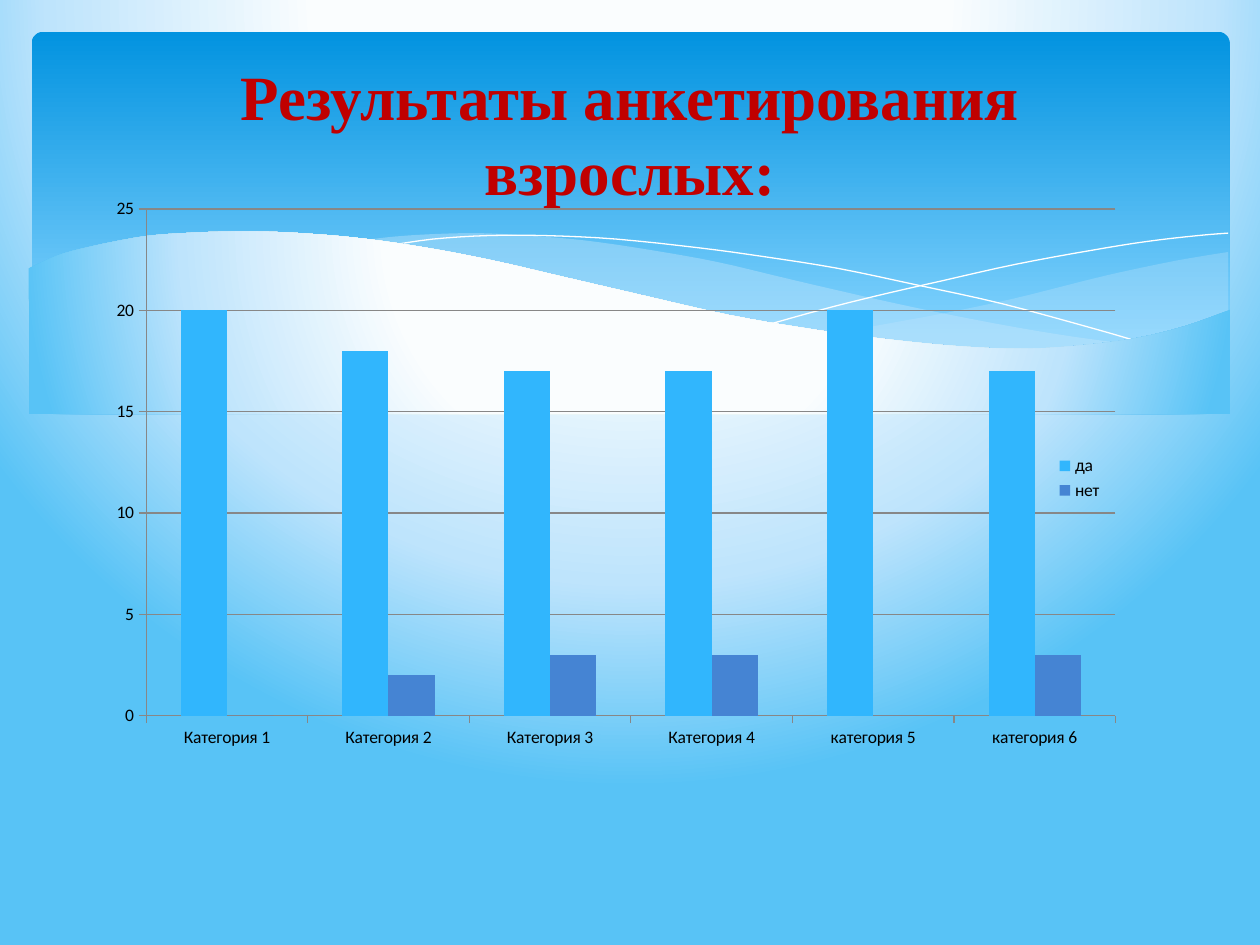
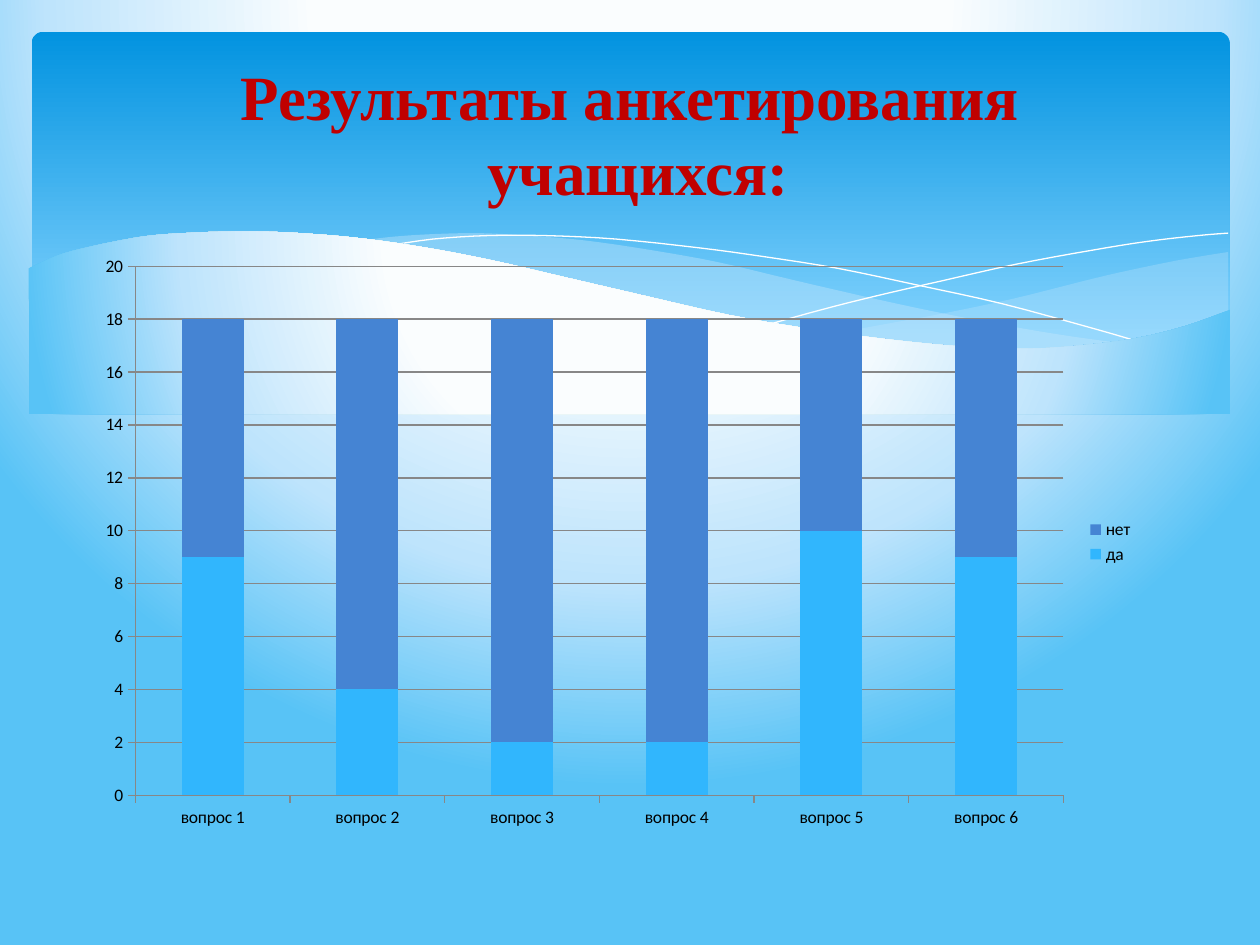
from collections import namedtuple
from dataclasses import dataclass

from lxml import etree
from pptx import Presentation
from pptx.chart.data import CategoryChartData
from pptx.dml.color import RGBColor as Rgb
from pptx.enum.chart import XL_CHART_TYPE as ChartType
from pptx.enum.chart import XL_LEGEND_POSITION as LegendSide
from pptx.enum.chart import XL_TICK_MARK as Tick
from pptx.enum.shapes import MSO_SHAPE as Preset
from pptx.enum.text import MSO_ANCHOR as Anchor
from pptx.enum.text import PP_ALIGN as Align
from pptx.oxml.ns import qn
from pptx.util import Cm, Pt

Box = namedtuple("Box", "left top width height")


@dataclass(frozen=True)
class Theme:
    title_color: str = "C00000"
    text_color: str = "000000"
    axis_color: str = "878787"
    haze_color: str = "C6E7FC"
    line_color: str = "FFFFFF"
    yes_color: str = "31B6FD"
    no_color: str = "4584D3"
    glow: tuple = ((40, "FAFDFE"), (74, "BEE4FC"), (100, "58C3F6"))
    band: tuple = ((0, "0293E0"), (90, "83D3FE"))
    title_font: str = "Times New Roman"
    chart_font: str = "Calibri"
    title_size: int = 36
    chart_size: int = 10
    axis_width: float = 0.75


THEME = Theme()

# Boxes in centimetres
BAND = Box(0.64, 0.64, 24.15, 6.86)
WAVES = Box(0.58, 4.67, 24.23, 3.68)
TITLE = Box(1.27, 0.94, 22.86, 3.48)

# Wave edges: knots in centimetres from the corner of the wave box
HAZES = (
    (29, (
        ((24.18, 0.41), (23.16, 0.58), (22.05, 0.81), (21.29, 0.99),
         (19.86, 1.35), (18.54, 1.63), (17.35, 1.85), (16.21, 2.06)),
        ((16.21, 2.06), (17.32, 2.21), (18.34, 2.31), (19.25, 2.36),
         (20.35, 2.36), (21.34, 2.31), (22.2, 2.18), (23.16, 1.98),
         (24.18, 1.6)),
    )),
    (40, (
        ((22.1, 2.26), (20.68, 2.06), (19.1, 1.78), (17.35, 1.42),
         (15.39, 0.97), (13.87, 0.61), (12.47, 0.36), (11.23, 0.18),
         (10.08, 0.08), (9.07, 0.03), (8.15, 0.05), (7.37, 0.1),
         (6.68, 0.18)),
        ((6.68, 0.18), (8.1, 0.38), (9.68, 0.69), (10.82, 0.97),
         (12.88, 1.42), (14.68, 1.8), (16.31, 2.08), (17.75, 2.29),
         (19.05, 2.36), (20.19, 2.39), (21.18, 2.36), (22.1, 2.26)),
    )),
)
HAIRLINES = (
    ((7.26, 0.28), (8.15, 0.15), (9.25, 0.08), (10.41, 0.08), (11.84, 0.15),
     (13.54, 0.33), (14.86, 0.51), (16.31, 0.74), (17.88, 1.07),
     (19.61, 1.45), (21.49, 1.96), (22.45, 2.24)),
    ((14.99, 1.85), (16, 1.57), (17.07, 1.3), (18.42, 0.99), (19.89, 0.66),
     (21.41, 0.38), (22.53, 0.2), (23.57, 0.08), (24.18, 0.03)),
)
CREST = (
    (24.23, 1.57), (23.29, 1.91), (22.25, 2.16), (21.01, 2.31), (19.96, 2.36),
    (18.75, 2.31), (17.4, 2.18), (15.88, 1.98), (14.12, 1.68), (12.19, 1.24),
    (10.77, 0.91), (9.35, 0.58), (8.05, 0.33), (6.83, 0.15), (5.77, 0.05),
    (4.78, 0), (3.91, 0), (3.12, 0.03), (2.44, 0.08), (1.83, 0.18),
    (1.12, 0.33), (0.58, 0.48), (0, 0.74),
)

SURVEYS = (
    dict(
        title="Результаты анкетирования\vвзрослых:",
        box=Box(1.7, 3.94, 20.8, 11.4),
        kind=ChartType.COLUMN_CLUSTERED,
        questions=[f"Категория {n}" for n in range(1, 5)]
        + [f"категория {n}" for n in (5, 6)],
        yes=(20, 18, 17, 17, 20, 17),
        no=(0, 2, 3, 3, 0, 3),
        scale=dict(minimum_scale=0, maximum_scale=25, major_unit=5),
        overlap=0,
        plot_area=dict(x=0.06, y=0.024, w=0.94, h=0.896),
    ),
    dict(
        title="Результаты анкетирования\v учащихся:",
        box=Box(1.7, 4.93, 21.41, 11.99),
        kind=ChartType.COLUMN_STACKED,
        questions=[f"вопрос {n}" for n in range(1, 7)],
        yes=(9, 4, 2, 2, 10, 9),
        no=(9, 14, 16, 16, 8, 9),
        scale=dict(minimum_scale=0, maximum_scale=20, major_unit=2),
        overlap=100,
        plot_area=None,
    ),
)


def set_format(target, values):
    for name, value in values.items():
        setattr(target, name, value)


def set_font(font, family, size, color, bold=False):
    set_format(font, dict(name=family, size=Pt(size), bold=bold))
    font.color.rgb = Rgb.from_string(color)


def in_cm(box):
    return [Cm(length) for length in box]


def add_child(parent, tag, **attributes):
    child = etree.SubElement(parent, qn(tag))
    for name, value in attributes.items():
        child.set(name, str(value))
    return child


def paint_gradient(owner, fill, stops, radial):
    fill.gradient()
    gradient = next(owner._element.iter(qn("a:gradFill")))
    gradient.clear()
    stop_list = add_child(gradient, "a:gsLst")
    for percent, color in stops:
        stop = add_child(stop_list, "a:gs", pos=percent * 1000)
        add_child(stop, "a:srgbClr", val=color)
    if radial:
        circle = add_child(gradient, "a:path", path="circle")
        add_child(circle, "a:fillToRect", l=20000, t=-40000, r=20000, b=140000)
    else:
        add_child(gradient, "a:lin", ang=5400000, scaled=0)


def smooth_edge(knots, steps=4):
    """Catmull-Rom curve through the knots."""
    padded = [knots[0], *knots, knots[-1]]
    curve = [knots[0]]
    for a, b, c, d in zip(padded, padded[1:], padded[2:], padded[3:]):
        for step in range(1, steps + 1):
            t = step / steps
            curve.append(tuple(
                q + 0.5 * t * (r - p + t * (2 * p - 5 * q + 4 * r - s
                                            + t * (3 * (q - r) + s - p)))
                for p, q, r, s in zip(a, b, c, d)))
    return curve


def add_outline(slide, box, edges, close=True):
    points = [(Cm(box.left + x), Cm(box.top + y))
              for edge in edges for x, y in smooth_edge(edge)]
    builder = slide.shapes.build_freeform(*points[0])
    builder.add_line_segments(points[1:], close=close)
    outline = builder.convert_to_shape()
    outline.shadow.inherit = False
    if close:
        outline.line.fill.background()
    return outline


def add_band(slide, box):
    band = slide.shapes.add_shape(Preset.ROUNDED_RECTANGLE, *in_cm(box))
    band.adjustments[0] = 0.034
    band.shadow.inherit = False
    band.line.fill.background()
    paint_gradient(band, band.fill, THEME.band, radial=False)


def add_waves(slide, box):
    # Translucent hazes
    for opacity, edges in HAZES:
        haze = add_outline(slide, box, edges)
        haze.fill.solid()
        haze.fill.fore_color.rgb = Rgb.from_string(THEME.haze_color)
        color = next(haze._element.iter(qn("a:srgbClr")))
        add_child(color, "a:alpha", val=opacity * 1000)

    # White hairlines
    for knots in HAIRLINES:
        hairline = add_outline(slide, box, [knots], close=False)
        hairline.fill.background()
        hairline.line.color.rgb = Rgb.from_string(THEME.line_color)
        hairline.line.width = Pt(0)

    # Light crest that cuts off the band
    floor = ((0, box.height), (box.width, box.height))
    crest = add_outline(slide, box, (CREST, floor))
    paint_gradient(crest, crest.fill, THEME.glow, radial=True)


def add_title(slide, box, wording):
    frame = slide.shapes.add_textbox(*in_cm(box)).text_frame
    set_format(frame, dict(word_wrap=True, vertical_anchor=Anchor.MIDDLE))
    heading = frame.paragraphs[0]
    heading.text = wording
    heading.alignment = Align.CENTER
    for run in heading.runs:
        set_font(run.font, THEME.title_font, THEME.title_size,
                 THEME.title_color, bold=True)


def set_plot_area(chart, fractions):
    area = next(chart._chartSpace.iter(qn("c:plotArea")))
    for old in area.findall(qn("c:layout")):
        area.remove(old)
    layout = etree.Element(qn("c:layout"))
    area.insert(0, layout)
    manual = add_child(layout, "c:manualLayout")
    add_child(manual, "c:layoutTarget", val="inner")
    for side in "xy":
        add_child(manual, f"c:{side}Mode", val="edge")
    for name, fraction in fractions.items():
        add_child(manual, f"c:{name}", val=fraction)


def add_answers_chart(slide, box, survey):
    answers = CategoryChartData()
    answers.categories = survey["questions"]
    answers.add_series("да", survey["yes"])
    answers.add_series("нет", survey["no"])
    chart = slide.shapes.add_chart(survey["kind"], *in_cm(box), answers).chart
    set_format(chart, dict(has_title=False, has_legend=True))
    set_font(chart.font, THEME.chart_font, THEME.chart_size, THEME.text_color)
    set_format(chart.legend, dict(
        position=LegendSide.RIGHT,
        include_in_layout=survey["plot_area"] is not None))

    # Columns
    plot = chart.plots[0]
    set_format(plot, dict(gap_width=150, overlap=survey["overlap"],
                          vary_by_categories=False))
    for series, color in zip(plot.series, (THEME.yes_color, THEME.no_color)):
        series.format.fill.solid()
        series.format.fill.fore_color.rgb = Rgb.from_string(color)

    # Axes and grid
    values, questions = chart.value_axis, chart.category_axis
    set_format(values, dict(survey["scale"], has_major_gridlines=True))
    for axis in (values, questions):
        set_format(axis, dict(major_tick_mark=Tick.OUTSIDE,
                              minor_tick_mark=Tick.NONE))
    for ruled in (values, questions, values.major_gridlines):
        ruled.format.line.color.rgb = Rgb.from_string(THEME.axis_color)
        ruled.format.line.width = Pt(THEME.axis_width)

    if survey["plot_area"]:
        set_plot_area(chart, survey["plot_area"])


def add_survey_slide(deck, survey):
    slide = deck.slides.add_slide(deck.slide_layouts[6])
    add_band(slide, BAND)
    add_waves(slide, WAVES)
    add_title(slide, TITLE, survey["title"])
    add_answers_chart(slide, survey["box"], survey)


def main():
    deck = Presentation()
    set_format(deck, dict(slide_width=Cm(25.4), slide_height=Cm(19.05)))
    master = deck.slide_master
    paint_gradient(master, master.background.fill, THEME.glow, radial=True)
    for survey in SURVEYS:
        add_survey_slide(deck, survey)
    deck.save("out.pptx")


if __name__ == "__main__":
    main()
